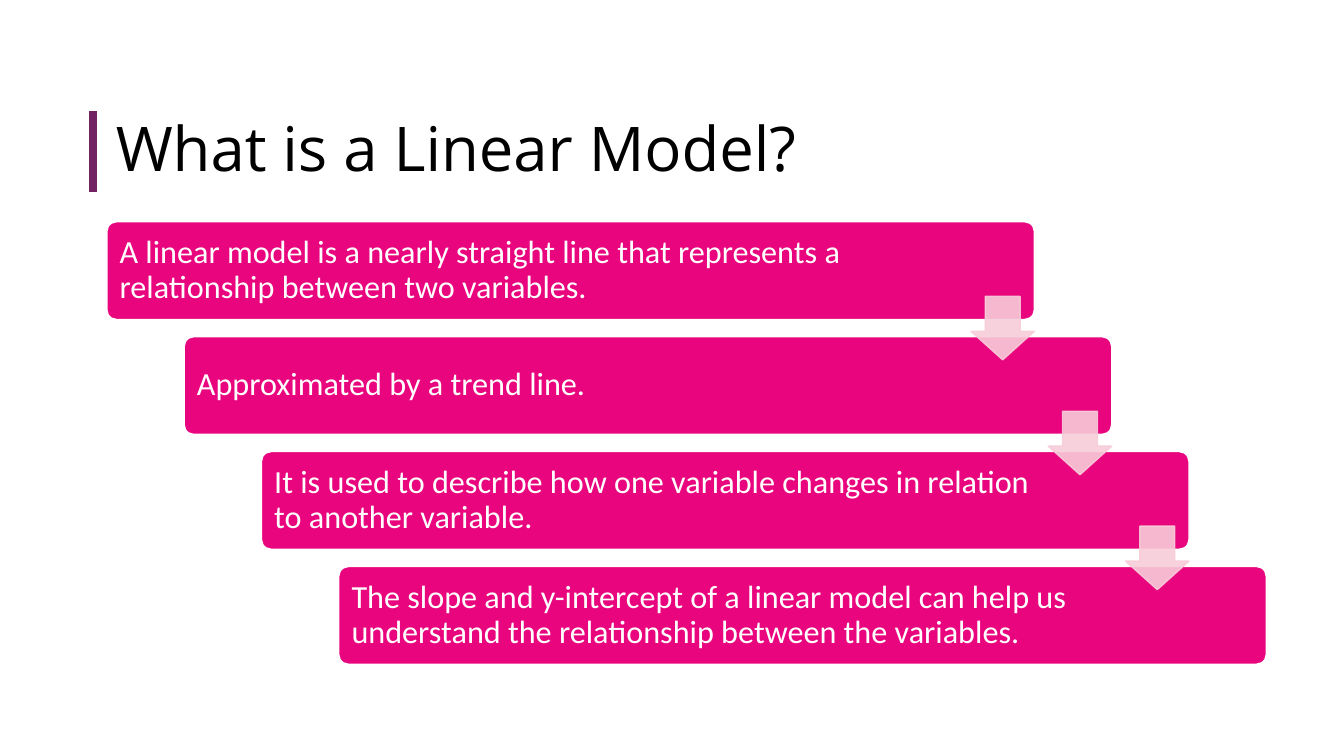
from lxml import etree
from pptx import Presentation
from pptx import util as u
from pptx.dml.color import RGBColor
from pptx.enum import shapes, text
from pptx.oxml.ns import qn

COLORS = {"rule": "722262", "step": "E9057E", "arrow": "F7CCD8",
          "white": "FFFFFF", "title": "000000"}
STATEMENTS = [
    "A linear model is a nearly straight line that represents a relationship between two variables.",
    "Approximated by a trend line.",
    "It is used to describe how one variable changes in relation to another variable.",
    "The slope and y-intercept of a linear model can help us understand the relationship between the variables.",
]
LEFT, TOP, WIDTH, HEIGHT = 1.06, 2.2, 9.2, 0.97
SHIFT_X, SHIFT_Y = 2.3 / 3, 1.14
ARROW_SIZE, ARROW_DROP = 0.63, 0.74


def rgb(name):
    return RGBColor.from_string(COLORS[name])


def add_block(kind, left, top, width, height, fill, line):
    block = slide.shapes.add_shape(
        kind, u.Inches(left), u.Inches(top), u.Inches(width), u.Inches(height))
    block.shadow.inherit = False
    block.fill.solid()
    block.fill.fore_color.rgb = rgb(fill)
    block.line.color.rgb = rgb(line)
    block.line.width = u.Pt(1)
    return block


prs = Presentation()
prs.slide_width, prs.slide_height = u.Inches(13.33), u.Inches(7.5)
slide = prs.slides.add_slide(prs.slide_layouts[6])

rule = slide.shapes.add_connector(
    shapes.MSO_CONNECTOR.STRAIGHT,
    u.Inches(0.92), u.Inches(1.1), u.Inches(0.92), u.Inches(1.9))
rule.line.color.rgb = rgb("rule")
rule.line.width = u.Pt(6)
etree.SubElement(rule._element.spPr, qn("a:effectLst"))

title = slide.shapes.add_textbox(
    u.Inches(1.05), u.Inches(1.1), u.Inches(11.5), u.Inches(0.8)).text_frame
title.word_wrap = True
title.vertical_anchor = text.MSO_ANCHOR.MIDDLE
heading = title.paragraphs[0]
heading.text = "What is a Linear Model?"
heading.line_spacing = 0.9
heading.font.name = "Open Sans"
heading.font.size = u.Pt(44)
heading.font.color.rgb = rgb("title")

for i, statement in enumerate(STATEMENTS):
    step = add_block(shapes.MSO_SHAPE.ROUNDED_RECTANGLE, LEFT + i * SHIFT_X,
                     TOP + i * SHIFT_Y, WIDTH, HEIGHT, "step", "white")
    step.adjustments[0] = 0.1
    frame = step.text_frame
    frame.word_wrap = True
    frame.vertical_anchor = text.MSO_ANCHOR.MIDDLE
    frame.margin_left = frame.margin_top = frame.margin_bottom = u.Inches(0.1)
    frame.margin_right = u.Inches(1.49)
    sentence = frame.paragraphs[0]
    sentence.text = statement
    sentence.alignment = text.PP_ALIGN.LEFT
    sentence.line_spacing = 0.9
    sentence.font.name = "Calibri"
    sentence.font.size = u.Pt(23)
    sentence.font.color.rgb = rgb("white")

for i in range(len(STATEMENTS) - 1):
    arrow = add_block(shapes.MSO_SHAPE.DOWN_ARROW,
                      LEFT + WIDTH - ARROW_SIZE + i * SHIFT_X,
                      TOP + ARROW_DROP + i * SHIFT_Y,
                      ARROW_SIZE, ARROW_SIZE, "arrow", "arrow")
    arrow.adjustments[0] = 0.55
    arrow.adjustments[1] = 0.45
    for color in arrow._element.spPr.iter(qn("a:srgbClr")):
        etree.SubElement(color, qn("a:alpha"), val="90000")

prs.save("out.pptx")
